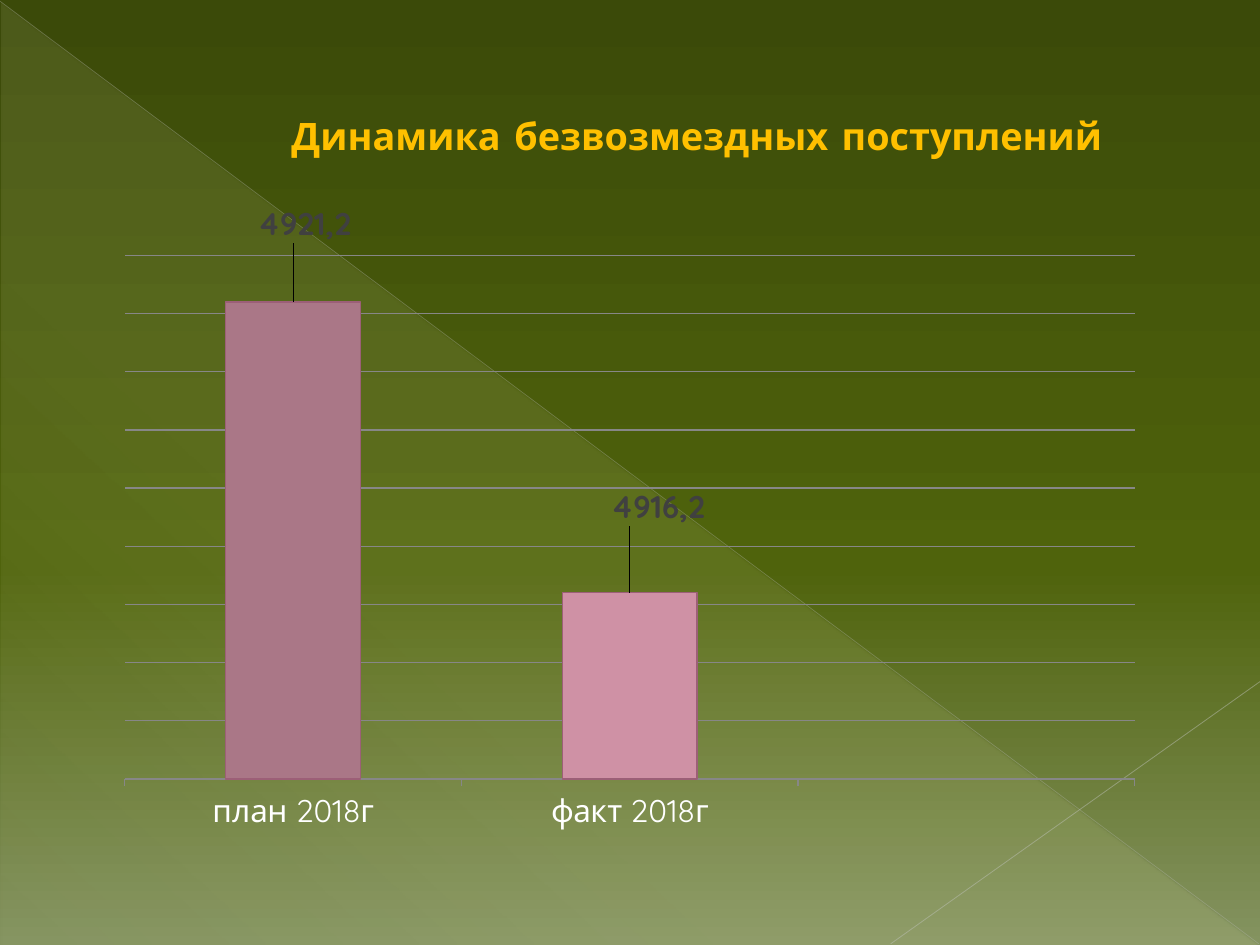
from lxml.etree import SubElement
from pptx import Presentation
from pptx.chart.data import CategoryChartData
from pptx.dml.color import RGBColor
from pptx.enum.chart import XL_CHART_TYPE as ChartType, XL_LABEL_POSITION as LabelPos
from pptx.enum.chart import XL_TICK_LABEL_POSITION as TickLabels, XL_TICK_MARK as TickMark
from pptx.enum.shapes import MSO_CONNECTOR as Connector, MSO_SHAPE as Shape
from pptx.enum.text import MSO_ANCHOR as Anchor, PP_ALIGN as Align
from pptx.oxml import parse_xml
from pptx.oxml.ns import nsdecls, qn
from pptx.util import Pt

# Content
TITLE = "Динамика безвозмездных поступлений"
WHITE = RGBColor(0xFF, 0xFF, 0xFF)
GOLD = RGBColor(0xFF, 0xC0, 0x00)
DARK = RGBColor(0x40, 0x40, 0x40)
GRID = RGBColor(0x87, 0x87, 0x87)
BAR_EDGE = RGBColor(0x9C, 0x5F, 0x77)
CATEGORIES = ["план 2018г", "факт 2018г"]
VALUES = [4921.2, 4916.2, None]  # the third slot stays empty
# label, bar colour, label shift in points
BARS = [
    ("4921,2", RGBColor(0xAA, 0x77, 0x87), (6.5, -31)),
    ("4916,2", RGBColor(0xCF, 0x91, 0xA5), (16.2, -35.2)),
]
# position %, colour, opacity %
BACKDROP = [(0, "3B4A09", 100), (60, "4F630C", 100), (100, "849360", 100)]
SHEEN = [(0, "FEFAC9", 10), (70, "FEFAC9", 8), (100, "FEFAC9", 1)]
# start, end, colour, width, opacity %
DIAGONALS = [
    ((0, 0.7), (719.3, 539.3), RGBColor(0xBA, 0xBD, 0xB3), 0.39, 35),
    ((720, 389.5), (509, 539.3), RGBColor(0xC1, 0xC4, 0xBC), 0.47, 45),
]
# chart frame and plot area in points
CHART_W, CHART_H = 601.2, 362.9
PLOT = {"x": 11.5, "y": 27.3, "w": 577.2, "h": 301.1}
NO_LEADERS = (
    f'<c:extLst {nsdecls("c")}><c:ext uri="{{CE6537A1-D6FC-4f65-9D91-7224C49458BB}}" '
    'xmlns:c15="http://schemas.microsoft.com/office/drawing/2012/chart">'
    '<c15:showLeaderLines val="0"/></c:ext></c:extLst>')


def apply(target, **values):
    for name, value in values.items():
        setattr(target, name, value)


def set_gradient(fill, element, stops, angle):
    fill.gradient()
    grad = element.find(".//" + qn("a:gradFill"))
    for child in list(grad):
        grad.remove(child)
    stop_list = SubElement(grad, qn("a:gsLst"))
    for position, colour, opacity in stops:
        stop = SubElement(stop_list, qn("a:gs"), pos=str(position * 1000))
        tone = SubElement(stop, qn("a:srgbClr"), val=colour)
        SubElement(tone, qn("a:alpha"), val=str(opacity * 1000))
    SubElement(grad, qn("a:lin"), ang=str(angle * 60000), scaled="0")


def manual_layout(modes, places):
    """Layout element; places are points, stored as shares of the chart."""
    shares = {name: value / (CHART_W if name in "xw" else CHART_H)
              for name, value in places.items()}
    parts = "".join(f'<c:{name} val="{value}"/>' for name, value in {**modes, **shares}.items())
    return parse_xml(f'<c:layout {nsdecls("c")}><c:manualLayout>{parts}</c:manualLayout></c:layout>')


deck = Presentation()
apply(deck, slide_width=Pt(720), slide_height=Pt(540))
page = deck.slides.add_slide(deck.slide_layouts[5])

# Background, sheen and diagonals
set_gradient(page.background.fill, page.element, BACKDROP, 90)
sheen = page.shapes.add_shape(Shape.RIGHT_TRIANGLE, Pt(0.7), Pt(1.4), Pt(718.6), Pt(538.6))
sheen.shadow.inherit = False
sheen.line.fill.background()
set_gradient(sheen.fill, sheen.element, SHEEN, 133)
for start, end, colour, width, opacity in DIAGONALS:
    diagonal = page.shapes.add_connector(Connector.STRAIGHT, *map(Pt, start + end))
    diagonal.line.width = Pt(width)
    diagonal.line.color.rgb = colour
    tone = diagonal.element.find(".//" + qn("a:ln")).find(".//" + qn("a:srgbClr"))
    SubElement(tone, qn("a:alpha"), val=str(opacity * 1000))
    SubElement(diagonal.element.spPr, qn("a:effectLst"))

# Title, in front of the sheen
title = page.shapes.title
title.element.getparent().append(title.element)
apply(title, left=Pt(65.5), top=Pt(58), width=Pt(589.7), height=Pt(39))
apply(title.text_frame, word_wrap=True, vertical_anchor=Anchor.MIDDLE)
para = title.text_frame.paragraphs[0]
para.alignment = Align.CENTER
para._p.get_or_add_pPr().set("marL", str(Pt(76)))
span = para.add_run()
span.text = TITLE
apply(span.font, name="Comic Neue", size=Pt(21.6), bold=True)
span.font.color.rgb = GOLD

# Column chart
data = CategoryChartData(number_format="0.0")
data.categories = CATEGORIES
data.add_series("Series 1", VALUES)
chart = page.shapes.add_chart(
    ChartType.COLUMN_CLUSTERED, Pt(59.8), Pt(116.6), Pt(CHART_W), Pt(CHART_H), data).chart
apply(chart, has_legend=False, has_title=False)
apply(chart.font, name="Quicksand", size=Pt(18))
chart.font.color.rgb = WHITE

area = chart.element.find(".//" + qn("c:plotArea"))
for old in area.findall(qn("c:layout")):
    area.remove(old)
area.insert(0, manual_layout(
    {"layoutTarget": "inner", "xMode": "edge", "yMode": "edge"}, PLOT))

# Axes
apply(chart.value_axis, minimum_scale=4913, maximum_scale=4922, major_unit=1,
      has_major_gridlines=True, major_tick_mark=TickMark.NONE,
      tick_label_position=TickLabels.NONE)
chart.value_axis.format.line.fill.background()
chart.category_axis.major_tick_mark = TickMark.OUTSIDE
for line in (chart.value_axis.major_gridlines.format.line, chart.category_axis.format.line):
    line.width = Pt(0.75)
    line.color.rgb = GRID

# Bars and their labels
plot = chart.plots[0]
apply(plot, gap_width=150, vary_by_categories=False)
series = plot.series[0]
apply(series.data_labels, show_value=True, position=LabelPos.OUTSIDE_END)
for index, (text, colour, shift) in enumerate(BARS):
    point = series.points[index]
    point.format.fill.solid()
    point.format.fill.fore_color.rgb = colour
    point.format.line.width = Pt(0.75)
    point.format.line.color.rgb = BAR_EDGE
    label = point.data_label
    label.position = LabelPos.OUTSIDE_END
    span = label.text_frame.paragraphs[0].add_run()
    span.text = text
    apply(span.font, name="Quicksand", size=Pt(18), bold=True)
    span.font.color.rgb = DARK
    label_element = series._element.findall(".//" + qn("c:dLbl"))[index]
    label_element.find(qn("c:idx")).addnext(manual_layout({}, dict(zip("xy", shift))))
series._element.find(qn("c:dLbls")).append(parse_xml(NO_LEADERS))

deck.save("out.pptx")
